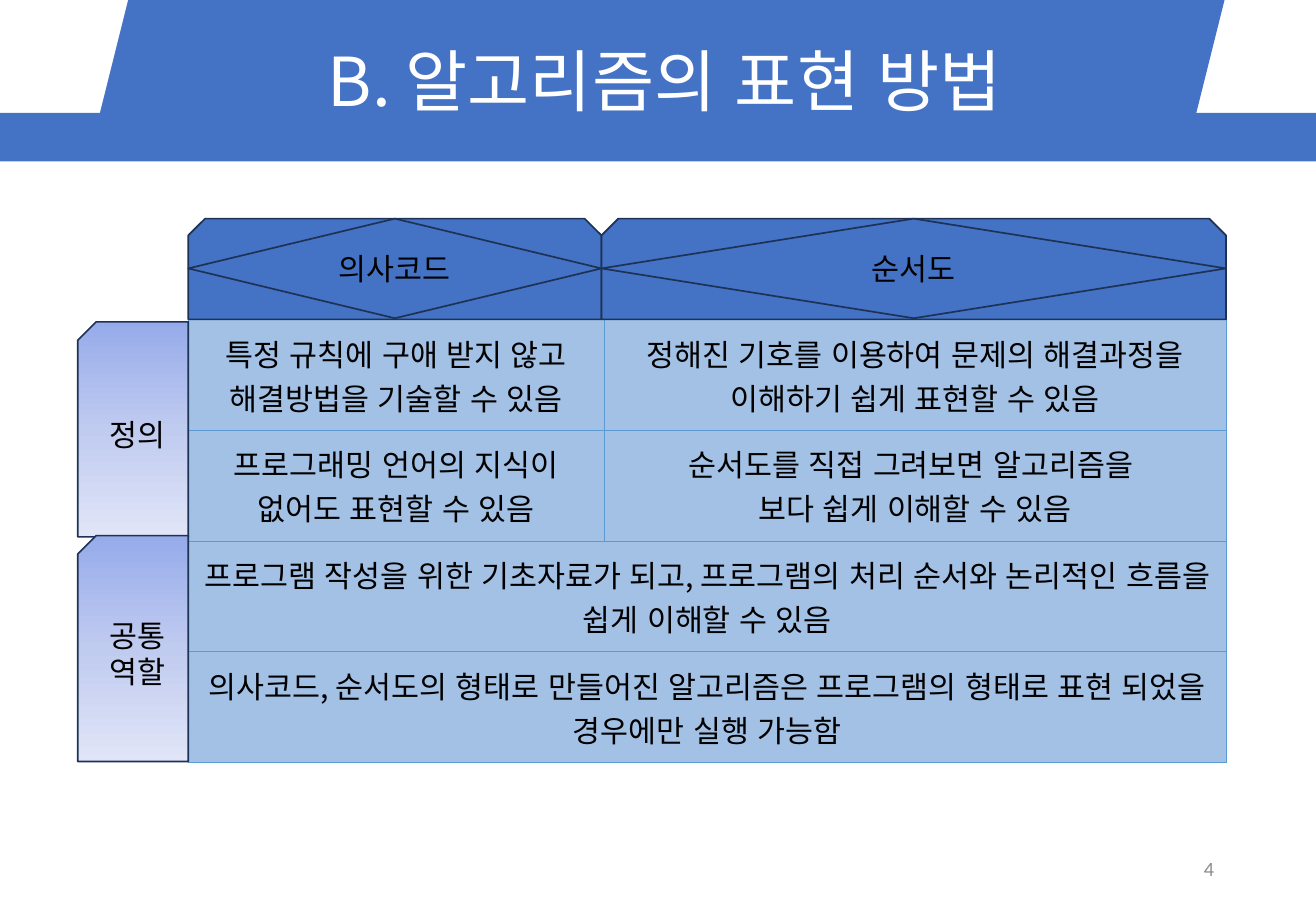
"""Builds a slide comparing pseudocode and flowcharts as ways to express algorithms."""
import copy
import dataclasses

import pptx
import pptx.dml.color
import pptx.enum.lang
import pptx.enum.shapes
import pptx.enum.text
import pptx.oxml
import pptx.oxml.ns
import pptx.util

Inches = pptx.util.Inches
Pt = pptx.util.Pt
RGB = pptx.dml.color.RGBColor.from_string
SHAPE = pptx.enum.shapes.MSO_SHAPE
ALIGN = pptx.enum.text.PP_ALIGN
MIDDLE = pptx.enum.text.MSO_ANCHOR.MIDDLE
qn = pptx.oxml.ns.qn


@dataclasses.dataclass(frozen=True)
class Theme:
    blue: str = "4472C4"
    outline: str = "1E3256"
    cell: str = "A3C0E5"
    border: str = "5B9BD5"
    gradient: tuple = ("96ABEA", "C0CBF0", "E0E5F7")
    white: str = "FFFFFF"
    black: str = "000000"
    gray: str = "8C8C8C"
    font: str = "Noto Sans CJK KR"
    number_font: str = "Calibri"
    title_size: int = 40
    body_size: int = 18
    number_size: int = 12


theme = Theme()


def write(tf, lines, size=theme.body_size, color=theme.black, font=theme.font,
          align=ALIGN.CENTER, spacing=1.0):
    tf.word_wrap = True
    tf.vertical_anchor = MIDDLE
    for i, line in enumerate(lines):
        p = tf.add_paragraph() if i else tf.paragraphs[0]
        p.text = line
        p.alignment = align
        p.line_spacing = spacing
        p.font.size = Pt(size)
        p.font.name = font
        p.font.color.rgb = RGB(color)
        p.font.language_id = pptx.enum.lang.MSO_LANGUAGE_ID.KOREAN
        props = p._p.get_or_add_pPr().find(qn("a:defRPr"))
        props.set("kern", "0")
        east_asian = pptx.oxml.parse_xml(
            f'<a:ea {pptx.oxml.ns.nsdecls("a")} typeface="{font}"/>')
        props.find(qn("a:latin")).addnext(east_asian)


def add_box(kind, left, top, width, height, outlined=True):
    sp = s.shapes.add_shape(kind, Inches(left), Inches(top), Inches(width), Inches(height))
    sp.shadow.inherit = False
    sp.fill.solid()
    sp.fill.fore_color.rgb = RGB(theme.blue)
    if outlined:
        sp.line.color.rgb = RGB(theme.outline)
        sp.line.width = Pt(1)
    else:
        sp.line.fill.background()
    return sp


prs = pptx.Presentation()
prs.slide_width = Inches(10.83)
prs.slide_height = Inches(7.5)
s = prs.slides.add_slide(prs.slide_layouts[5])

add_box(SHAPE.RECTANGLE, 0, 0.93, 10.83, 0.4, outlined=False)
add_box(SHAPE.PARALLELOGRAM, 0.74, -0.01, 9.34, 1.27, outlined=False)

title = s.shapes.title
title.left, title.top = Inches(0.74), Inches(-0.03)
title.width, title.height = Inches(9.34), Inches(1.45)
title.text_frame.auto_size = pptx.enum.text.MSO_AUTO_SIZE.NONE
write(title.text_frame, [" B. 알고리즘의 표현 방법"], theme.title_size, theme.white, spacing=0.9)
s.shapes._spTree.append(title._element)

rows = [
    [["특정 규칙에 구애 받지 않고 해결방법을 기술할 수 있음"],
     ["정해진 기호를 이용하여 문제의 해결과정을 이해하기 쉽게 표현할 수 있음"]],
    [["프로그래밍 언어의 지식이 없어도 표현할 수 있음"],
     ["순서도를 직접 그려보면 알고리즘을 ", "보다 쉽게 이해할 수 있음"]],
    [["프로그램 작성을 위한 기초자료가 되고, 프로그램의 처리 순서와 논리적인 흐름을 쉽게 이해할 수 있음"]],
    [["의사코드, 순서도의 형태로 만들어진 알고리즘은 프로그램의 형태로 표현 되었을 경우에만 실행 가능함"]],
]
table = s.shapes.add_table(len(rows), 2, Inches(1.55), Inches(2.63),
                           Inches(8.54), Inches(3.65)).table
table.first_row = False
table.horz_banding = False
for column, width in zip(table.columns, (3.42, 5.12)):
    column.width = Inches(width)
for i, texts in enumerate(rows):
    table.rows[i].height = Inches(3.65 / len(rows))
    for cell in table.rows[i].cells:
        for side in ("lnL", "lnR", "lnT", "lnB"):
            cell._tc.get_or_add_tcPr().append(pptx.oxml.parse_xml(
                f'<a:{side} {pptx.oxml.ns.nsdecls("a")} w="{Pt(0.5)}"><a:solidFill>'
                f'<a:srgbClr val="{theme.border}"/></a:solidFill></a:{side}>'))
        cell.fill.solid()
        cell.fill.fore_color.rgb = RGB(theme.cell)
        cell.vertical_anchor = MIDDLE
    if len(texts) == 1:
        table.cell(i, 0).merge(table.cell(i, 1))
    for j, lines in enumerate(texts):
        write(table.cell(i, j).text_frame, lines)

number = s.shapes.add_textbox(Inches(7.65), Inches(6.95), Inches(2.44), Inches(0.4))
write(number.text_frame, ["4"], theme.number_size, theme.gray, theme.number_font, ALIGN.RIGHT)

for text, left, width in (("의사코드", 1.55, 3.4), ("순서도", 4.95, 5.14)):
    add_box(SHAPE.SNIP_2_SAME_RECTANGLE, left, 1.8, width, 0.83)
    diamond = add_box(SHAPE.DIAMOND, left, 1.8, width, 0.82)
    write(diamond.text_frame, [text])

for text, top, height in (("정의", 2.65, 1.77), ("공통 역할", 4.41, 1.86)):
    label = add_box(SHAPE.SNIP_1_RECTANGLE, 0.64, top, 0.91, height)
    label._element.spPr.find(qn("a:xfrm")).set("flipH", "1")
    label.fill.gradient()
    label.fill.gradient_angle = 270
    stops = label._element.spPr.find(".//" + qn("a:gsLst"))
    stops.insert(1, copy.deepcopy(stops[0]))
    for i, (stop, color) in enumerate(zip(label.fill.gradient_stops, theme.gradient)):
        stop.position = i / 2
        stop.color.rgb = RGB(color)
    write(label.text_frame, [text])

prs.save("out.pptx")
